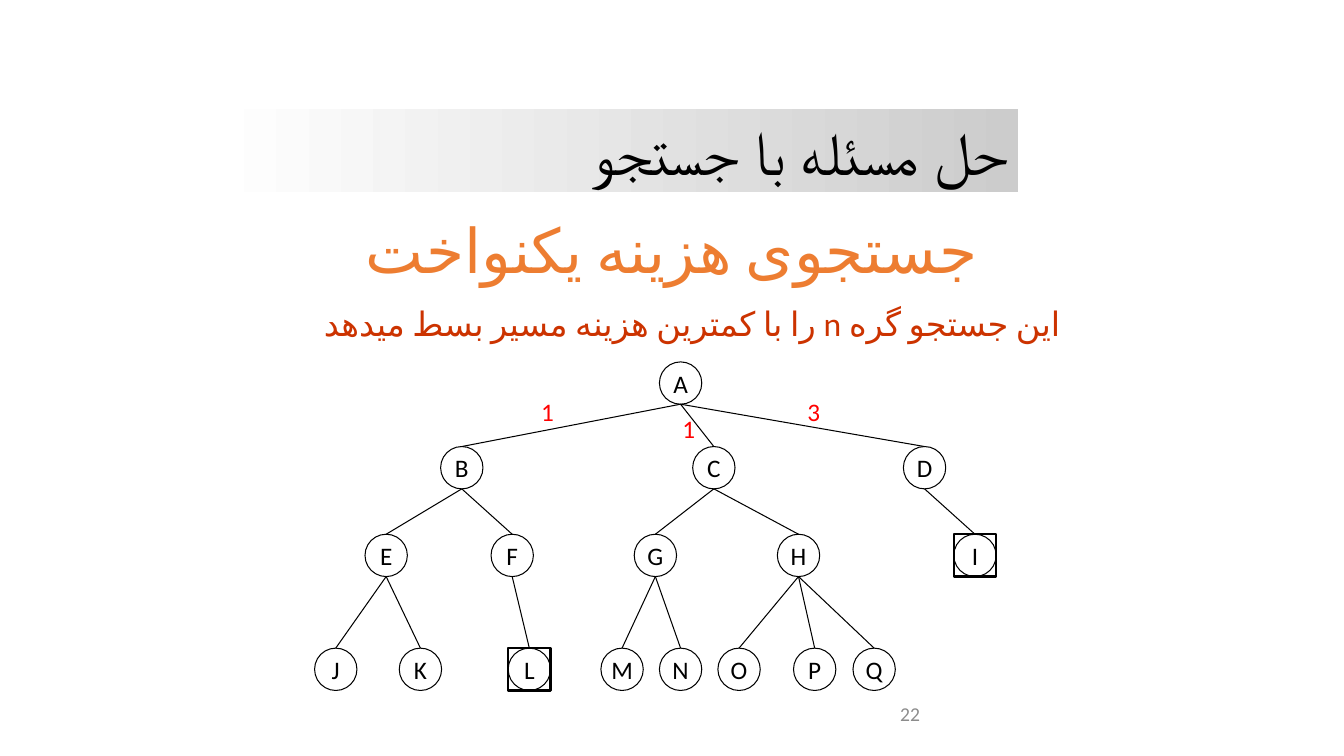
"""Build a slide that explains uniform-cost search with a tree."""
from lxml import etree
from pptx import Presentation
from pptx.dml.color import RGBColor
from pptx.enum import shapes, text
from pptx.oxml import ns
from pptx.util import Inches, Pt

BLACK = RGBColor(0x00, 0x00, 0x00)
WHITE = RGBColor(0xFF, 0xFF, 0xFF)
SILVER = RGBColor(0xCC, 0xCC, 0xCC)
GRAY = RGBColor(0x8C, 0x8C, 0x8C)
ORANGE = RGBColor(0xED, 0x7D, 0x31)
RUST = RGBColor(0xCC, 0x33, 0x00)
RED = RGBColor(0xFF, 0x00, 0x00)

TITLE = "حل مسئله با جستجو"
SUBTITLE = "جستجوی هزينه يکنواخت"
SUMMARY = "اين جستجو گره n را با کمترين هزينه مسير بسط ميدهد"
PAGE_NUMBER = "22"

NODE_SIZE = 0.42
LEVELS = [
    (3.59, {"A": 6.54}),
    (4.43, {"B": 4.37, "C": 6.87, "D": 8.96}),
    (5.3, {"E": 3.62, "F": 4.87, "G": 6.29, "H": 7.71, "I": 9.46}),
    (6.43, {"J": 3.12, "K": 3.96, "L": 5.04, "M": 5.96, "N": 6.54,
            "O": 7.12, "P": 7.87, "Q": 8.46}),
]
CHILDREN = {"A": "BCD", "B": "EF", "C": "GH", "D": "I",
            "E": "JK", "F": "L", "G": "MN", "H": "OPQ"}
GOALS = "LI"
COSTS = [("1", 5.27, 3.88), ("1", 6.67, 4.05), ("3", 7.91, 3.88)]


def write(shape, words, size, color, font="Calibri", align=None,
          rtl=False, wrap=True, anchor=text.MSO_ANCHOR.TOP):
    """Put one formatted run of text into a shape."""
    frame = shape.text_frame
    frame.word_wrap = wrap
    frame.auto_size = text.MSO_AUTO_SIZE.NONE
    frame.vertical_anchor = anchor
    paragraph = frame.paragraphs[0]
    paragraph.alignment = align
    run = paragraph.add_run()
    run.text = words
    run.font.size = Pt(size)
    run.font.name = font
    run.font.color.rgb = color
    if rtl:
        paragraph._p.get_or_add_pPr().set("rtl", "1")
        properties = run._r.get_or_add_rPr()
        properties.set("lang", "fa-IR")
        etree.SubElement(properties, ns.qn("a:cs")).set("typeface", font)


def add_text(slide, box, *args, **kwargs):
    """Add a text box with one formatted run."""
    write(slide.shapes.add_textbox(*map(Inches, box)), *args, **kwargs)


def add_outline(slide, kind, left, top, width):
    """Add an unfilled node-sized shape with a black outline."""
    shape = slide.shapes.add_shape(
        kind, *map(Inches, (left, top, NODE_SIZE, NODE_SIZE)))
    shape.shadow.inherit = False
    shape.fill.background()
    shape.line.color.rgb = BLACK
    shape.line.width = Pt(width)
    return shape


def add_node(slide, label, left, top):
    """Add a labelled circle of the tree."""
    node = add_outline(slide, shapes.MSO_SHAPE.OVAL, left, top, 0.75)
    node.fill.solid()
    node.fill.fore_color.rgb = WHITE
    write(node, label, 18, BLACK, align=text.PP_ALIGN.CENTER, wrap=False,
          anchor=text.MSO_ANCHOR.MIDDLE)
    return node


def add_branch(slide, parent, child):
    """Join the bottom of a parent to the top of its child."""
    branch = slide.shapes.add_connector(
        shapes.MSO_CONNECTOR.STRAIGHT,
        parent.left + parent.width // 2, parent.top + parent.height,
        child.left + child.width // 2, child.top)
    branch.end_connect(child, 0)
    branch.line.color.rgb = BLACK
    branch.line.width = Pt(0.75)
    etree.SubElement(branch._element.spPr, ns.qn("a:effectLst"))


def add_title(slide):
    """Format the title placeholder as a bar that fades to the left."""
    title = slide.shapes.title
    title.left, title.top, title.width, title.height = map(
        Inches, (2.1, 1.08, 8, 0.83))
    title.fill.gradient()
    title.fill.gradient_angle = 0
    for stop, color in zip(title.fill.gradient_stops, (WHITE, SILVER)):
        stop.color.rgb = color
    write(title, TITLE, 44, BLACK, "Times New Roman",
          text.PP_ALIGN.RIGHT, rtl=True)


def add_tree(slide):
    """Draw nodes, branches, goal frames and step costs."""
    nodes = {label: add_node(slide, label, left, top)
             for top, row in LEVELS for label, left in row.items()}
    for parent, children in CHILDREN.items():
        for child in children:
            add_branch(slide, nodes[parent], nodes[child])
    for top, row in LEVELS:
        for label, left in row.items():
            if label in GOALS:
                add_outline(slide, shapes.MSO_SHAPE.RECTANGLE, left, top, 1.75)
    for cost, left, top in COSTS:
        add_text(slide, (left, top, 0.34, 0.4), cost, 18, RED, wrap=False)


def main():
    """Create and save the presentation."""
    presentation = Presentation()
    presentation.slide_width = Inches(13.33)
    presentation.slide_height = Inches(7.5)
    slide = presentation.slides.add_slide(presentation.slide_layouts[5])
    add_title(slide)
    add_text(slide, (8.83, 6.83, 2.08, 0.5), PAGE_NUMBER, 14, GRAY,
             anchor=text.MSO_ANCHOR.MIDDLE)
    add_text(slide, (2.02, 2.05, 9.29, 0.83), SUBTITLE, 44, ORANGE,
             align=text.PP_ALIGN.CENTER, rtl=True)
    add_tree(slide)
    add_text(slide, (2.81, 2.96, 8.11, 0.5), SUMMARY, 24, RUST,
             align=text.PP_ALIGN.CENTER, rtl=True)
    presentation.save("out.pptx")


if __name__ == "__main__":
    main()
